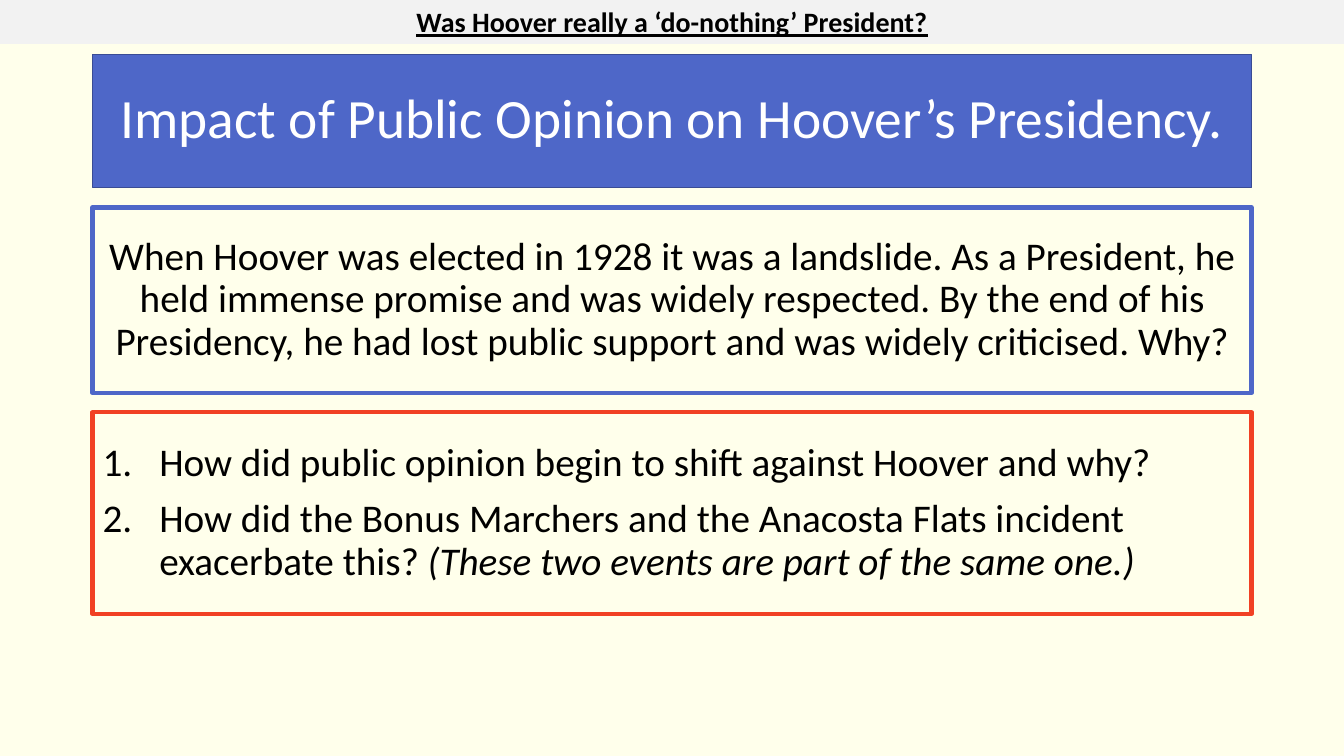
from lxml.etree import SubElement
from pptx import Presentation
from pptx.dml.color import RGBColor
from pptx.enum.text import MSO_ANCHOR as Anchor, MSO_AUTO_SIZE as AutoSize, PP_ALIGN as Align
from pptx.oxml.ns import qn
from pptx.util import Cm, Pt

FONT = "Calibri"
CREAM, GREY, BLACK, WHITE = "FFFFEB", "F2F2F2", "000000", "FFFFFF"
BLUE, DARK_BLUE, RED = "4E67C8", "3A4C94", "F14124"

SLIDE_WIDTH, SLIDE_HEIGHT = Cm(33.87), Cm(19.05)
LEFT, WIDTH = Cm(2.33), Cm(29.21)
BODY_SIZE = 28
NUMBER_INDENT = Cm(1.43)

INTRO = (
    "When Hoover was elected in 1928 it was a landslide. As a President, he held "
    "immense promise and was widely respected. By the end of his Presidency, he had "
    "lost public support and was widely criticised. Why?"
)
QUESTIONS = [
    [("How did public opinion begin to shift against Hoover and why?", False)],
    [
        ("How did the Bonus Marchers and the Anacosta Flats incident exacerbate this?", False),
        (" (These two events are part of the same one.)", True),
    ],
]


def color(value):
    return RGBColor.from_string(value)


def paint(shape, fill):
    shape.fill.solid()
    shape.fill.fore_color.rgb = color(fill)


def outline(shape, line, width):
    shape.line.color.rgb = color(line)
    shape.line.width = Pt(width)


def place(shape, box):
    shape.left, shape.top, shape.width, shape.height = box
    frame = shape.text_frame
    frame.word_wrap = True
    frame.auto_size = AutoSize.NONE
    frame.vertical_anchor = Anchor.MIDDLE
    return frame


def add_span(para, text, size, ink=BLACK, italic=None):
    span = para.add_run()
    span.text = text
    span.font.name = FONT
    span.font.size = Pt(size)
    span.font.color.rgb = color(ink)
    span.font.italic = italic
    return span


def format_para(para, align, before=0, indent=0, bullet="a:buNone", **bullet_options):
    """Set spacing, hanging indent and bullet kind of one paragraph."""
    para.alignment = align
    para.line_spacing = 0.9
    para.space_before = Pt(before)
    properties = para._p.get_or_add_pPr()
    properties.set("marL", str(indent))
    properties.set("indent", str(-indent))
    SubElement(properties, qn(bullet), **bullet_options)


def build_title(shape, box):
    para = place(shape, box).paragraphs[0]
    paint(shape, BLUE)
    outline(shape, DARK_BLUE, 1)
    format_para(para, Align.CENTER)
    add_span(para, "Impact of Public Opinion on Hoover’s Presidency.", 39.6, WHITE)


def build_intro(shape, box):
    para = place(shape, box).paragraphs[0]
    outline(shape, BLUE, 3)
    format_para(para, Align.CENTER, before=10)
    add_span(para, INTRO, BODY_SIZE)


def build_questions(shape, box):
    frame = place(shape, box)
    outline(shape, RED, 3)
    for number, question in enumerate(QUESTIONS):
        para = frame.add_paragraph() if number else frame.paragraphs[0]
        format_para(para, Align.LEFT, before=10, indent=NUMBER_INDENT,
                    bullet="a:buAutoNum", type="arabicPeriod")
        for text, italic in question:
            add_span(para, text, BODY_SIZE, italic=italic)


def build_banner(slide, box):
    banner = slide.shapes.add_textbox(*box)
    paint(banner, GREY)
    frame = banner.text_frame
    frame.word_wrap = True
    frame.auto_size = AutoSize.SHAPE_TO_FIT_TEXT
    para = frame.paragraphs[0]
    para.alignment = Align.CENTER
    span = add_span(para, "Was Hoover really a ‘do-nothing’ President?", 20)
    span.font.bold = True
    span.font.underline = True


def build_slide(deck):
    slide = deck.slides.add_slide(deck.slide_layouts.get_by_name("Two Content"))
    background = slide.background.fill
    background.solid()
    background.fore_color.rgb = color(CREAM)
    intro, questions = slide.placeholders[1], slide.placeholders[2]
    build_title(slide.shapes.title, (LEFT, Cm(1.37), WIDTH, Cm(3.35)))
    build_intro(intro, (LEFT, Cm(5.23), WIDTH, Cm(4.67)))
    build_questions(questions, (LEFT, Cm(10.39), WIDTH, Cm(5.08)))
    build_banner(slide, (0, 0, SLIDE_WIDTH, Cm(1.11)))


def main():
    deck = Presentation()
    deck.slide_width, deck.slide_height = SLIDE_WIDTH, SLIDE_HEIGHT
    build_slide(deck)
    deck.save("out.pptx")


if __name__ == "__main__":
    main()
